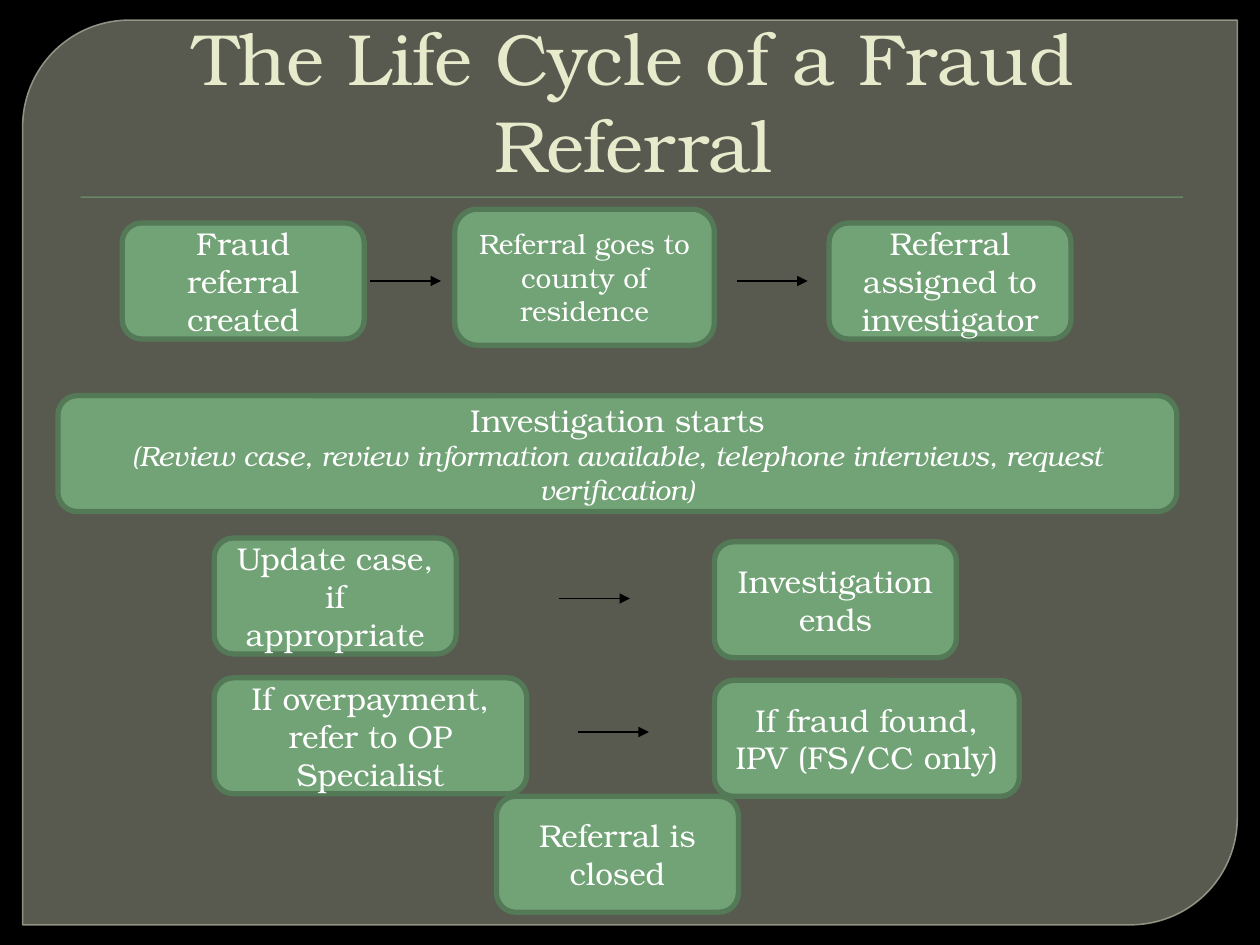
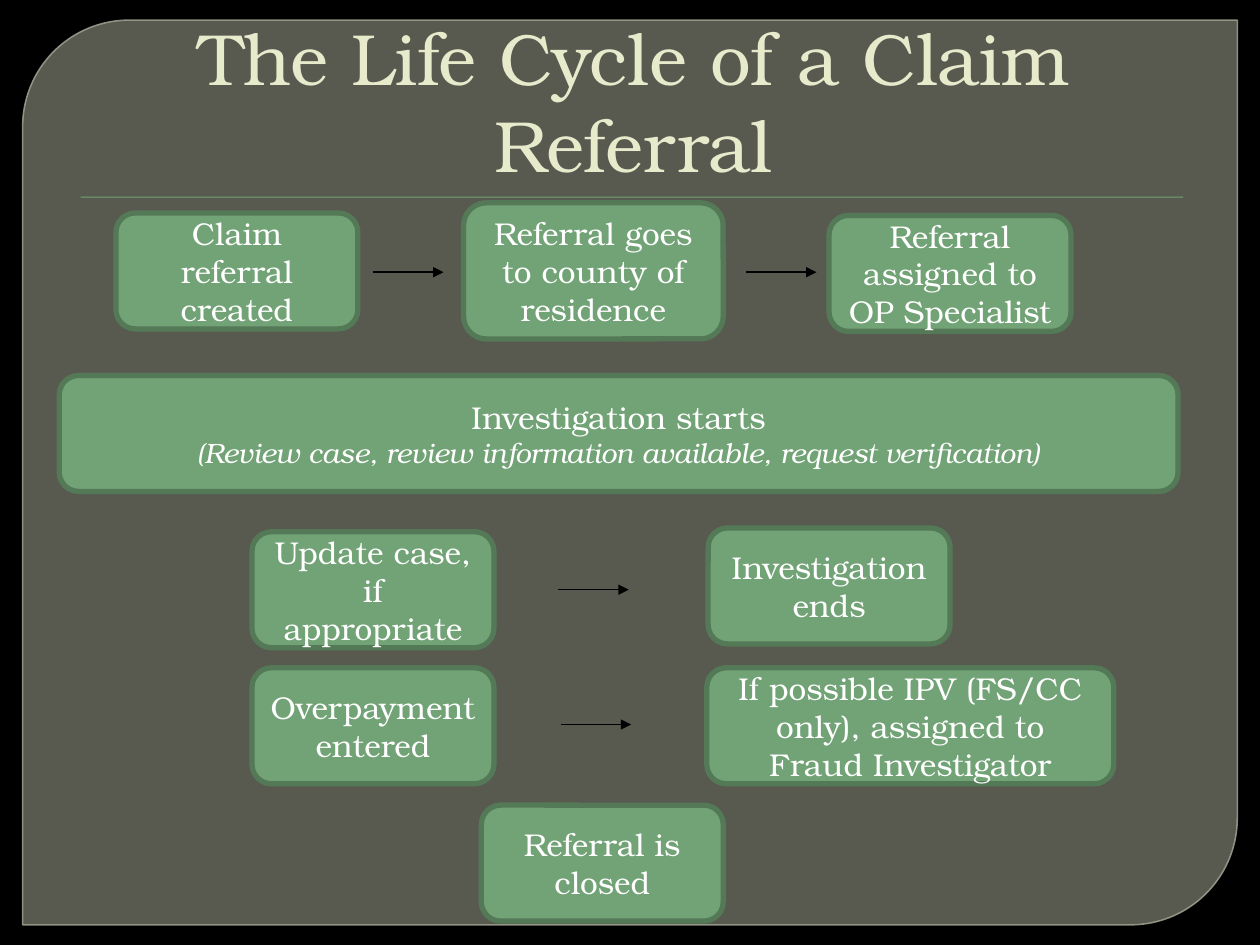
from dataclasses import dataclass

from lxml import etree
from pptx import Presentation
from pptx.dml.color import RGBColor
from pptx.enum.shapes import MSO_CONNECTOR, MSO_SHAPE
from pptx.enum.text import MSO_ANCHOR, PP_ALIGN
from pptx.oxml.ns import qn
from pptx.util import Inches, Pt

ROUND = MSO_SHAPE.ROUNDED_RECTANGLE
PANEL = MSO_SHAPE.ROUND_2_DIAG_RECTANGLE
RECT = MSO_SHAPE.RECTANGLE
LINE = MSO_CONNECTOR.STRAIGHT
MIDDLE = MSO_ANCHOR.MIDDLE
BOTTOM = MSO_ANCHOR.BOTTOM
CENTER = PP_ALIGN.CENTER

CELL = Inches(0.1)
COLS, ROWS = 100, 75
WIDE, TALL = 19.2, 9.2
REACH = 5.6


@dataclass(frozen=True)
class Theme:
    font: str = "TeX Gyre Bonum"
    back: str = "000000"
    panel: str = "888B7B"
    edge: str = "9DA090"
    title: str = "E7EACB"
    box: str = "72A376"
    rim: str = "547957"
    text: str = "FFFFFF"
    arrow: str = "000000"
    head: float = 41.4
    body: float = 18
    note: float = 16


def color(code):
    return RGBColor.from_string(code)


def grid(*cells):
    return [round(cell * CELL) for cell in cells]


def fade(part, share):
    for tint in part.iter(qn("a:srgbClr")):
        etree.SubElement(tint, qn("a:alpha"), val=str(share * 1000))


class Deck:
    def __init__(self, theme):
        self.theme = theme
        self.show = Presentation()
        self.show.slide_width, self.show.slide_height = grid(COLS, ROWS)
        self.slide = None

    def start(self, title):
        theme = self.theme
        self.slide = self.show.slides.add_slide(self.show.slide_layouts[6])
        fill = self.slide.background.fill
        fill.solid()
        fill.fore_color.rgb = color(theme.back)
        panel = self.shape(PANEL, (1.8, 1.6, 96.4, 71.8), theme.panel, theme.edge, 0.87)
        panel.adjustments[0] = 0.118
        panel.adjustments[1] = 0
        props = panel._element.spPr
        fade(props.find(qn("a:solidFill")), 65)
        fade(props.find(qn("a:ln")), 88)
        self.shape(RECT, (6.4, 15.6, 87.5, 0.1), theme.box)
        self.title(title)

    def shape(self, kind, place, fill, rim=None, width=0):
        shape = self.slide.shapes.add_shape(kind, *grid(*place))
        shape.shadow.inherit = False
        shape.fill.solid()
        shape.fill.fore_color.rgb = color(fill)
        if rim:
            shape.line.color.rgb = color(rim)
            shape.line.width = Pt(width)
        else:
            shape.line.fill.background()
        return shape

    def label(self, frame, lines, tint, anchor):
        frame.word_wrap = True
        frame.vertical_anchor = anchor
        for spot, (text, size, slant) in enumerate(lines):
            para = frame.add_paragraph() if spot else frame.paragraphs[0]
            para.text = text
            para.alignment = CENTER
            font = para.font
            font.name, font.size, font.italic = self.theme.font, Pt(size), slant
            font.color.rgb = color(tint)

    def title(self, text):
        frame = self.slide.shapes.add_textbox(*grid(5, 2.8, 90, 12.5)).text_frame
        frame.margin_left = Inches(0.16)
        self.label(frame, [(text, self.theme.head, False)], self.theme.title, BOTTOM)

    def box(self, text, left, top, width=WIDE, height=TALL, size=None, note=None):
        theme = self.theme
        shape = self.shape(ROUND, (left, top, width, height), theme.box, theme.rim, 3)
        lines = [(text, size or theme.body, False)]
        if note:
            lines.append((note, theme.note, True))
        self.label(shape.text_frame, lines, theme.text, MIDDLE)

    def arrow(self, left, top):
        ends = grid(left, top, left + REACH, top)
        line = self.slide.shapes.add_connector(LINE, *ends)
        line.line.color.rgb = color(self.theme.arrow)
        line.line.width = Pt(0.75)
        props = line._element.spPr
        etree.SubElement(props.find(qn("a:ln")), qn("a:tailEnd"), type="triangle")
        etree.SubElement(props, qn("a:effectLst"))

    def cycle(self, title, boxes, arrows):
        self.start(title)
        for box in boxes:
            self.box(**box)
        for spot in arrows:
            self.arrow(*spot)


def step(text, left, top, **more):
    return dict(text=text, left=left, top=top, **more)


def county(left, top, size=None):
    return step("Referral goes to county of residence", left, top,
                width=20.6, height=10.8, size=size)


def probe(left, top, note):
    return step("Investigation starts", left, top, width=88.8, note=note)


def finish(update, end, close):
    return [
        step("Investigation ends", *end),
        step("Update case, if appropriate", *update),
        step("Referral is closed", *close),
    ]


def main():
    theme = Theme()
    deck = Deck(theme)
    deck.cycle(
        "The Life Cycle of a Fraud Referral",
        [
            step("Fraud referral created", 9.7, 17.7),
            county(36.1, 16.6, theme.note),
            step("Referral assigned to investigator", 65.8, 17.7),
            probe(4.6, 31.4, "(Review case, review information available, "
                  "telephone interviews, request verification)"),
            step("If overpayment, refer to OP Specialist", 17, 53.8, width=24.8),
            step("If fraud found, IPV (FS/CC only)", 56.7, 54, width=24.2),
            *finish((17, 42.7), (56.7, 43), (39.4, 63.2)),
        ],
        [(29.4, 22.3), (58.5, 22.3), (44.4, 47.5), (45.9, 58.1)],
    )
    deck.cycle(
        "The Life Cycle of a Claim Referral",
        [
            step("Claim referral created", 9.2, 16.9),
            county(36.8, 16.1),
            step("Referral assigned to OP Specialist", 65.8, 17.1),
            probe(4.7, 29.8, "(Review case, review information available, "
                  "request verification)"),
            step("Overpayment entered", 20, 53),
            step("If possible IPV (FS/CC only), assigned to Fraud Investigator",
                 56.1, 53, width=32.3),
            *finish((20, 42.2), (56.2, 41.9), (38.2, 63.9)),
        ],
        [(29.6, 21.6), (59.2, 21.6), (44.3, 46.8), (44.5, 57.5)],
    )
    deck.show.save("out.pptx")


if __name__ == "__main__":
    main()
